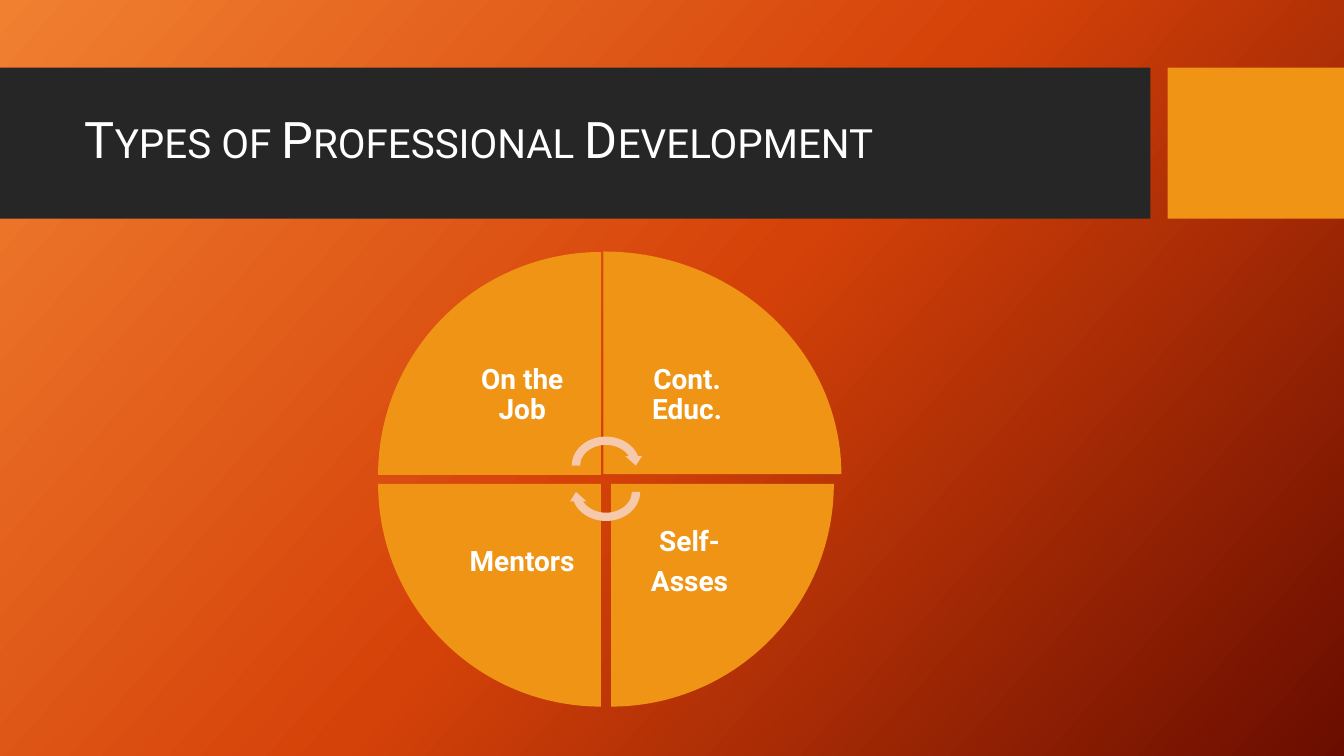
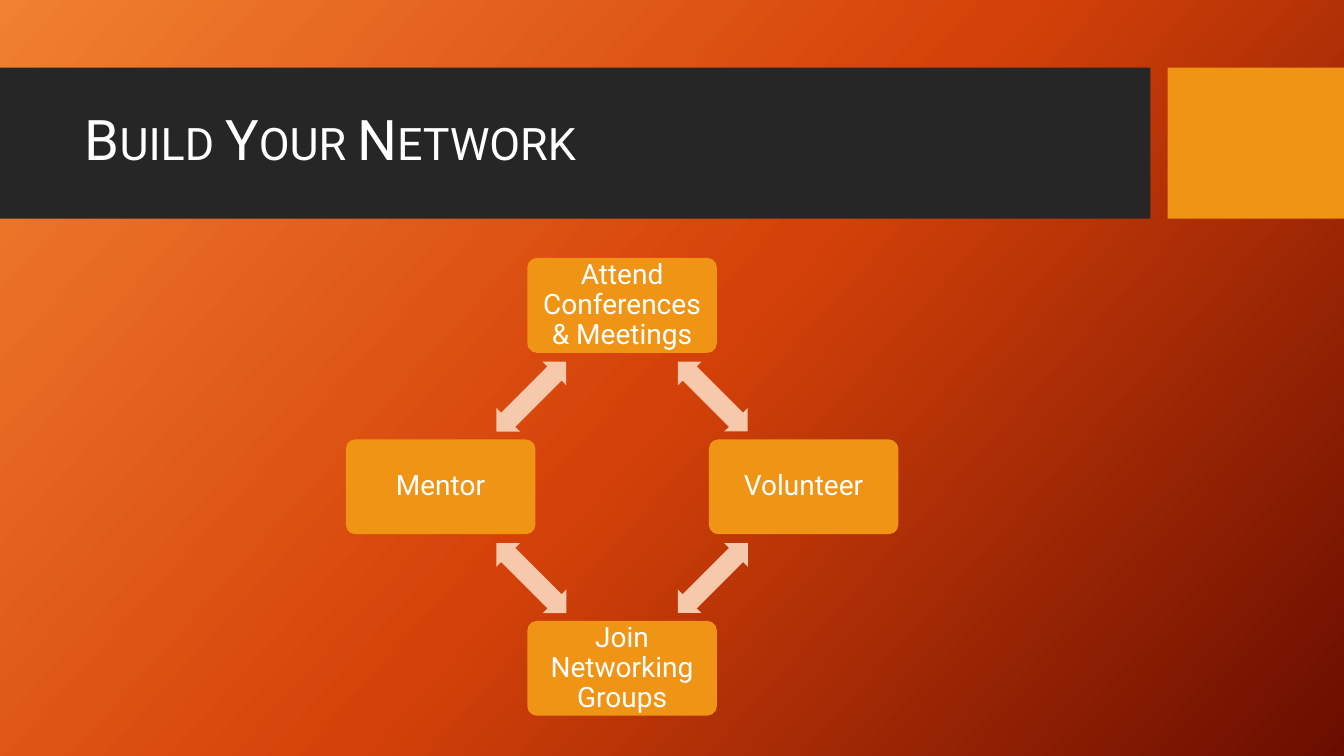
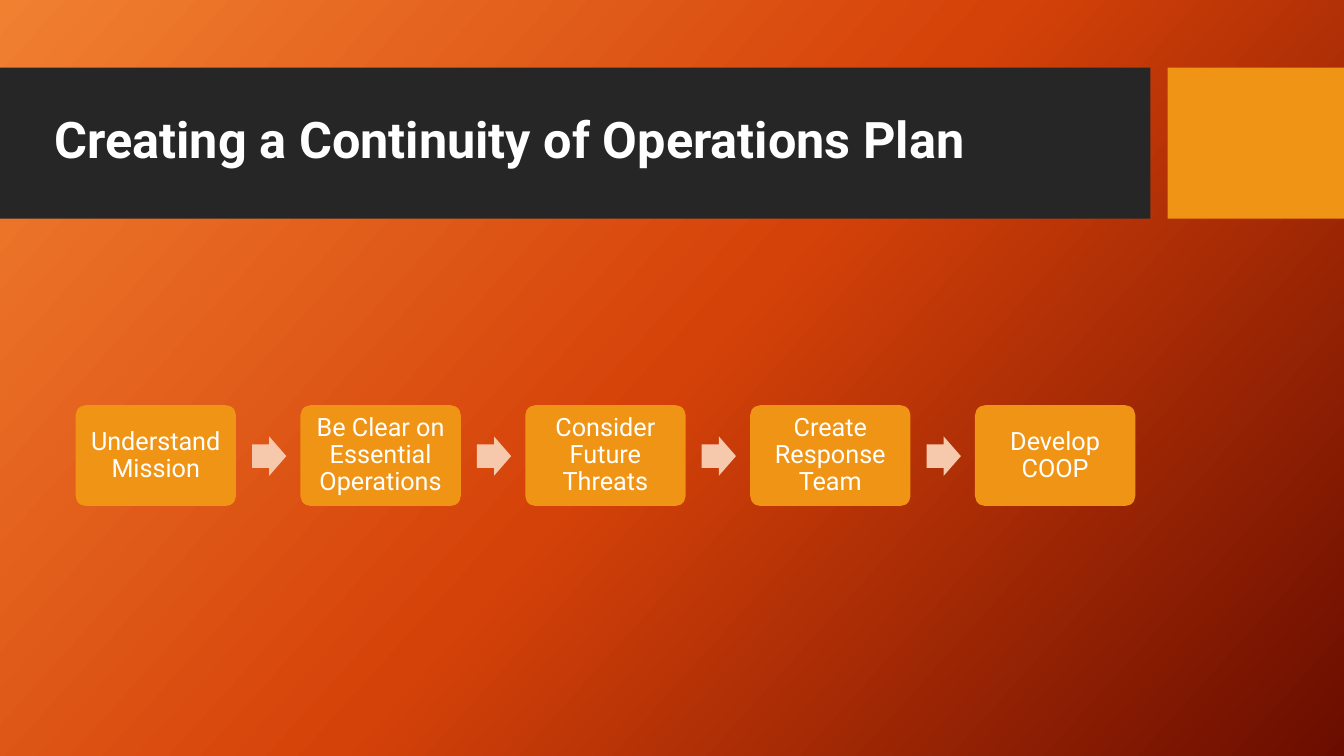
from copy import deepcopy
from dataclasses import dataclass

from pptx import Presentation
from pptx import util as u
from pptx.dml.color import RGBColor
from pptx.enum import shapes, text
from pptx.oxml.ns import qn

EMU_PER_PX = 9144
FONT = "Roboto"
COLOURS = {
    "glow": "F18031",
    "ember": "D54209",
    "maroon": "6A0D00",
    "band": "262626",
    "accent": "F09415",
    "arrow": "F6C8AC",
    "text": "FFFFFF",
}
PRESET = shapes.MSO_SHAPE


@dataclass(frozen=True)
class Frame:
    left: int
    top: int
    width: int
    height: int

    def emu(self) -> list[int]:
        return [px(n) for n in (self.left, self.top, self.width, self.height)]


@dataclass(frozen=True)
class Quadrant:
    label: str
    wedge: Frame
    label_frame: Frame
    rotation: int


TITLE_FRAME = Frame(74, 82, 1051, 118)
QUADRANTS = [
    Quadrant("On the Job", Frame(375, 250, 221, 221), Frame(440, 314, 156, 156), 0),
    Quadrant("Cont. Educ.", Frame(606, 242, 221, 236), Frame(598, 314, 167, 156), 90),
    Quadrant("Self-\nAsses", Frame(606, 480, 221, 221), Frame(606, 480, 156, 156), 180),
    Quadrant("Mentors", Frame(375, 480, 221, 221), Frame(440, 480, 156, 156), 270),
]
NETWORK_STEPS = [
    ("Attend Conferences\v& Meetings", 0, -1),
    ("Volunteer", 1, 0),
    ("Join Networking Groups", 0, 1),
    ("Mentor", -1, 0),
]
PLAN_STEPS = [
    "Understand Mission",
    "Be Clear on Essential Operations",
    "Consider Future Threats",
    "Create Response Team",
    "Develop COOP",
]


def px(length: int) -> u.Emu:
    return u.Emu(length * EMU_PER_PX)


def rgb(name: str) -> RGBColor:
    return RGBColor.from_string(COLOURS[name])


def write(shape, content: str, *, size: int, bold: bool = False,
          small_caps: bool = False, align=text.PP_ALIGN.CENTER,
          inset: int | None = None, space_after: float = 0) -> None:
    """Fill a shape with one paragraph for each line of content."""
    frame = shape.text_frame
    frame.word_wrap = True
    frame.auto_size = text.MSO_AUTO_SIZE.NONE
    frame.vertical_anchor = text.MSO_ANCHOR.MIDDLE
    if inset is not None:
        frame.margin_left = frame.margin_right = px(inset)
        frame.margin_top = frame.margin_bottom = px(inset)
    frame.text = content
    for paragraph in frame.paragraphs:
        paragraph.alignment = align
        paragraph.line_spacing = 0.9
        paragraph.space_before = u.Pt(0)
        paragraph.space_after = u.Pt(space_after)
        for run in paragraph.runs:
            run.font.name = FONT
            run.font.size = u.Pt(size)
            run.font.bold = bold
            run.font.color.rgb = rgb("text")
            if small_caps:
                run.font._element.set("cap", "small")


def add_preset(slide, preset, frame: Frame, colour: str, *,
               rotation: int = 0, adjustments: tuple[float, ...] = ()):
    shape = slide.shapes.add_shape(preset, *frame.emu())
    shape.shadow.inherit = False
    shape.fill.solid()
    shape.fill.fore_color.rgb = rgb(colour)
    shape.line.fill.background()
    shape.rotation = rotation
    for index, value in enumerate(adjustments):
        shape.adjustments[index] = value
    return shape


def add_step(slide, label: str, frame: Frame, *, size: int, inset: int) -> None:
    box = add_preset(slide, PRESET.ROUNDED_RECTANGLE, frame, "accent",
                     adjustments=(0.1,))
    write(box, label, size=size, inset=inset, space_after=size * 0.35)


def style_layout(layout, slide) -> None:
    """Give the layout its gradient, bands and title place.

    The bands are drawn on the slide, then moved to the layout.
    """
    fill = layout.background.fill
    fill.gradient()
    fill.gradient_angle = 360 - 42
    stop_list = layout._element.find(".//" + qn("a:gsLst"))
    stop_list.append(deepcopy(stop_list[0]))
    stops = zip(fill.gradient_stops, ("glow", "ember", "maroon"), (0, 0.5, 1))
    for stop, colour, position in stops:
        stop.color.rgb = rgb(colour)
        stop.position = position

    bands = [(Frame(0, 67, 1141, 150), "band"), (Frame(1158, 67, 175, 150), "accent")]
    for frame, colour in bands:
        band = add_preset(slide, PRESET.RECTANGLE, frame, colour)
        layout.shapes._spTree.insert(2, band._element)
    place(layout.placeholders[0], TITLE_FRAME)


def place(shape, frame: Frame) -> None:
    shape.left, shape.top, shape.width, shape.height = frame.emu()


def set_title(slide, content: str, **style) -> None:
    write(slide.shapes.title, content, align=text.PP_ALIGN.LEFT, **style)


def build_types(slide) -> None:
    set_title(slide, "Types of Professional Development", size=36, small_caps=True)
    for quadrant in QUADRANTS:
        add_preset(slide, PRESET.PIE_WEDGE, quadrant.wedge, "accent",
                   rotation=quadrant.rotation)
        label = slide.shapes.add_textbox(*quadrant.label_frame.emu())
        write(label, quadrant.label, size=20, bold=True, inset=16, space_after=7)
    for top, rotation in ((429, 0), (455, 180)):
        add_preset(slide, PRESET.CIRCULAR_ARROW, Frame(563, top, 76, 66), "arrow",
                   rotation=rotation)


def build_network(slide) -> None:
    set_title(slide, "Build Your Network", size=40, small_caps=True)
    radius = 180
    for index, (label, across, down) in enumerate(NETWORK_STEPS):
        frame = Frame(523 + across * radius, 436 + down * radius, 188, 94)
        add_step(slide, label, frame, size=20, inset=8)
        _, next_across, next_down = NETWORK_STEPS[(index + 1) % len(NETWORK_STEPS)]
        arrow = Frame(568 + (across + next_across) * radius // 2,
                      467 + (down + next_down) * radius // 2, 98, 33)
        add_preset(slide, PRESET.LEFT_RIGHT_ARROW, arrow, "arrow",
                   rotation=45 + 90 * index, adjustments=(0.6, 0.5))


def build_plan(slide) -> None:
    set_title(slide, "Creating a Continuity of Operations Plan", size=36, bold=True)
    place(slide.shapes.title, Frame(44, 82, 1082, 118))
    for index, label in enumerate(PLAN_STEPS):
        left = 75 + 223 * index
        if index:
            add_preset(slide, PRESET.RIGHT_ARROW, Frame(left - 48, 433, 34, 39),
                       "arrow", adjustments=(0.6, 0.5))
        add_step(slide, label, Frame(left, 402, 159, 100), size=18, inset=7)


def main() -> None:
    presentation = Presentation()
    presentation.slide_width = px(1333)
    presentation.slide_height = px(750)
    layout = presentation.slide_layouts.get_by_name("Title Only")
    builders = (build_types, build_network, build_plan)
    slides = [presentation.slides.add_slide(layout) for _ in builders]
    style_layout(layout, slides[0])
    for build, slide in zip(builders, slides):
        build(slide)
    presentation.save("out.pptx")


if __name__ == "__main__":
    main()
